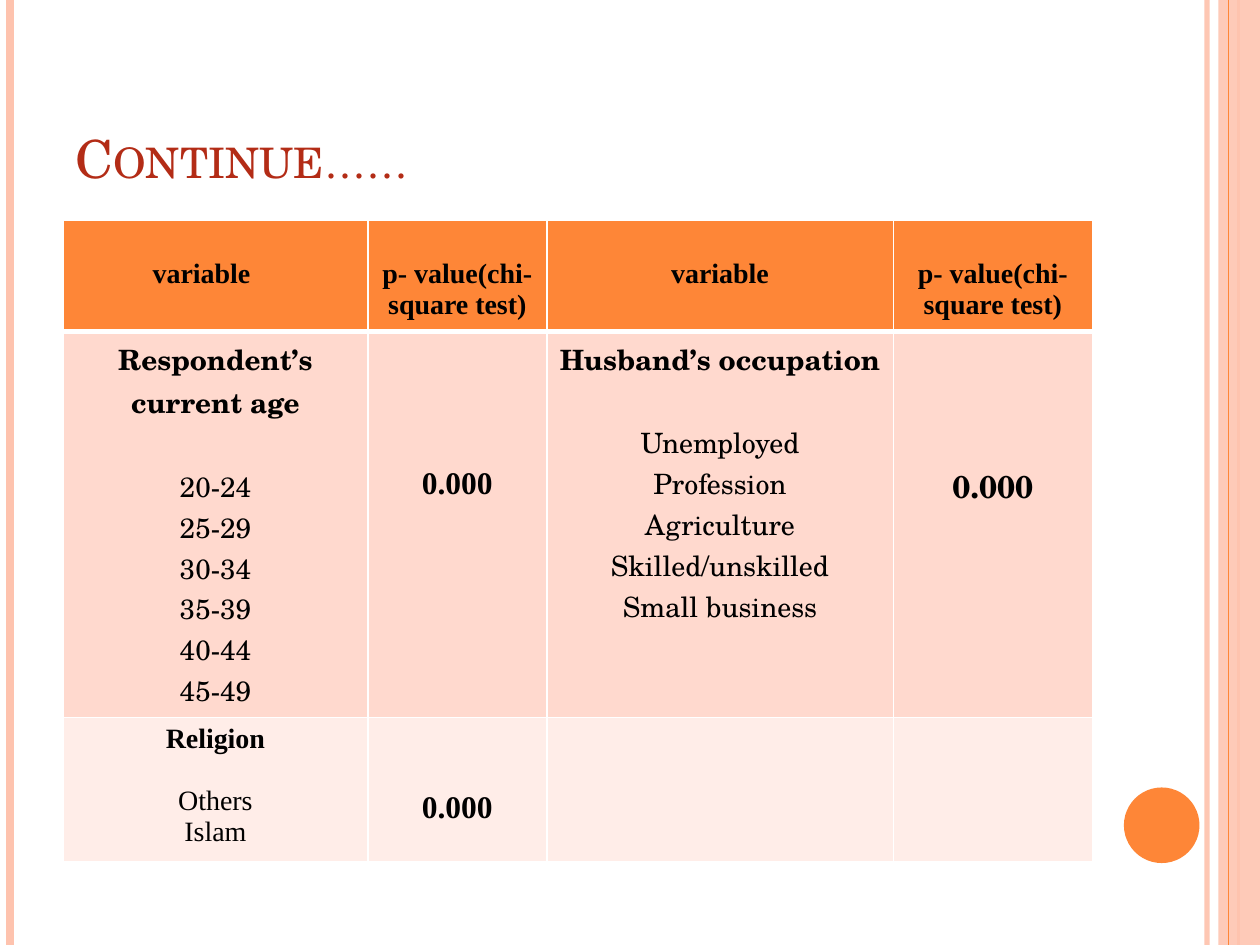
import pptx
import pptx.dml.color
import pptx.enum.shapes
import pptx.enum.text
import pptx.util
from pptx.oxml.ns import qn
from lxml import etree

Inches = pptx.util.Inches
Pt = pptx.util.Pt
Shape = pptx.enum.shapes.MSO_SHAPE

SERIF, SCHOOL = "Times New Roman", "TeX Gyre Schola"
ORANGE, PEACH = "FE8637", "FEC3AE"
HEADER_TOP = 0.3


def color(hex_string):
    return pptx.dml.color.RGBColor.from_string(hex_string)


def set_alpha(solid_fill, percent):
    alpha = etree.SubElement(solid_fill[0], qn("a:alpha"))
    alpha.set("val", str(percent * 1000))


class SlideBuilder:
    def __init__(self, slide):
        self.slide = slide

    def vertical_line(self, x, hex_string, width, opacity=100):
        line = self.slide.shapes.add_connector(
            pptx.enum.shapes.MSO_CONNECTOR.STRAIGHT,
            Inches(x), Inches(0), Inches(x), Inches(7.5))
        line.line.color.rgb = color(hex_string)
        line.line.width = Pt(width)
        properties = line._element.spPr
        etree.SubElement(properties, qn("a:effectLst"))
        if opacity < 100:
            set_alpha(properties.find(".//" + qn("a:solidFill")), opacity)

    def shape(self, kind, box, hex_string, opacity=100):
        shape = self.slide.shapes.add_shape(kind, *map(Inches, box))
        shape.shadow.inherit = False
        shape.fill.solid()
        shape.fill.fore_color.rgb = color(hex_string)
        shape.line.fill.background()
        if opacity < 100:
            set_alpha(shape._element.spPr.find(qn("a:solidFill")), opacity)

    def style(self, paragraph, font, size, bold, hex_string="000000"):
        paragraph.font.name = font
        paragraph.font.size = Pt(size)
        paragraph.font.bold = bold
        paragraph.font.color.rgb = color(hex_string)

    def title(self, text, box):
        frame = self.slide.shapes.add_textbox(*map(Inches, box)).text_frame
        frame.word_wrap = True
        frame.vertical_anchor = pptx.enum.text.MSO_ANCHOR.BOTTOM
        paragraph = frame.paragraphs[0]
        run = paragraph.add_run()
        run.text = text
        self.style(paragraph, SCHOOL, 30, False, "B32C16")
        run.font._element.set("cap", "small")

    def table(self, position, widths, heights):
        table = self.slide.shapes.add_table(
            len(heights), len(widths), *map(Inches, position),
            Inches(sum(widths)), Inches(sum(heights))).table
        for column, width in zip(table.columns, widths):
            column.width = Inches(width)
        for row, height in zip(table.rows, heights):
            row.height = Inches(height)
        return table

    def borders(self, cell, top, bottom):
        properties = cell._tc.get_or_add_tcPr()
        for side, width in (("L", 1), ("R", 1), ("T", top), ("B", bottom)):
            line = etree.SubElement(properties, qn("a:ln" + side), w=str(Pt(width)))
            fill = etree.SubElement(line, qn("a:solidFill"))
            etree.SubElement(fill, qn("a:srgbClr"), val="FFFFFF")

    def cell(self, cell, fill, heading="", items=(), font=SERIF, size=16,
             top=0.05, gap=0, right=0.08):
        """Bold heading, then plain items set apart by a gap in points."""
        cell.fill.solid()
        cell.fill.fore_color.rgb = color(fill)
        cell.margin_left, cell.margin_right = Inches(0.08), Inches(right)
        cell.margin_top = Inches(top)
        for index, text in enumerate((heading, *items)):
            frame = cell.text_frame
            paragraph = frame.add_paragraph() if index else frame.paragraphs[0]
            paragraph.text = text
            paragraph.alignment = pptx.enum.text.PP_ALIGN.CENTER
            self.style(paragraph, font, size, index == 0)
            if index == 1:
                paragraph.space_before = Pt(gap)


def main():
    presentation = pptx.Presentation()
    presentation.slide_width, presentation.slide_height = Inches(10), Inches(7.5)
    builder = SlideBuilder(presentation.slides.add_slide(presentation.slide_layouts[6]))

    # Side stripes and page circle
    builder.vertical_line(9.58, PEACH, 3, 93)
    builder.vertical_line(0.08, PEACH, 4.5)
    builder.vertical_line(9.83, PEACH, 1.5)
    builder.shape(Shape.RECTANGLE, (9.67, 0, 0.33, 7.5), PEACH, 87)
    builder.vertical_line(9.75, ORANGE, 0.75)
    builder.shape(Shape.OVAL, (8.92, 6.25, 0.6, 0.6), ORANGE)

    builder.title("Continue……", (0.5, 0.3, 8.17, 1.25))

    # Chi-square results: one dict of cell settings per column
    p_value = dict(heading="p- value(chi- square test)", top=HEADER_TOP)
    rows = [
        (ORANGE, [dict(heading="variable", top=HEADER_TOP, right=0.3), p_value,
                  dict(heading="variable", top=HEADER_TOP), p_value]),
        ("FFD9CE", [
            dict(heading="Respondent’s current age", font=SCHOOL, gap=23.5,
                 items=("20-24", "25-29", "30-34", "35-39", "40-44", "45-49")),
            dict(heading="0.000", size=18, top=1.07),
            dict(heading="Husband’s occupation", font=SCHOOL, gap=23.5,
                 items=("Unemployed", "Profession", "Agriculture",
                        "Skilled/unskilled", "Small business")),
            dict(heading="0.000", font=SCHOOL, size=18, top=1.03)]),
        ("FFEDE8", [
            dict(heading="Religion", items=("Others", "Islam"), gap=17.5),
            dict(heading="0.000", size=18, top=0.58), {}, {}]),
    ]
    table = builder.table((0.5, 1.75), (2.42, 1.42, 2.75, 1.58), (0.83, 3.06, 1.08))
    for row, (fill, cells) in enumerate(rows):
        for column, settings in enumerate(cells):
            cell = table.cell(row, column)
            builder.borders(cell, 3 if row == 1 else 1, 3 if row == 0 else 1)
            builder.cell(cell, fill, **settings)

    presentation.save("out.pptx")


if __name__ == "__main__":
    main()
